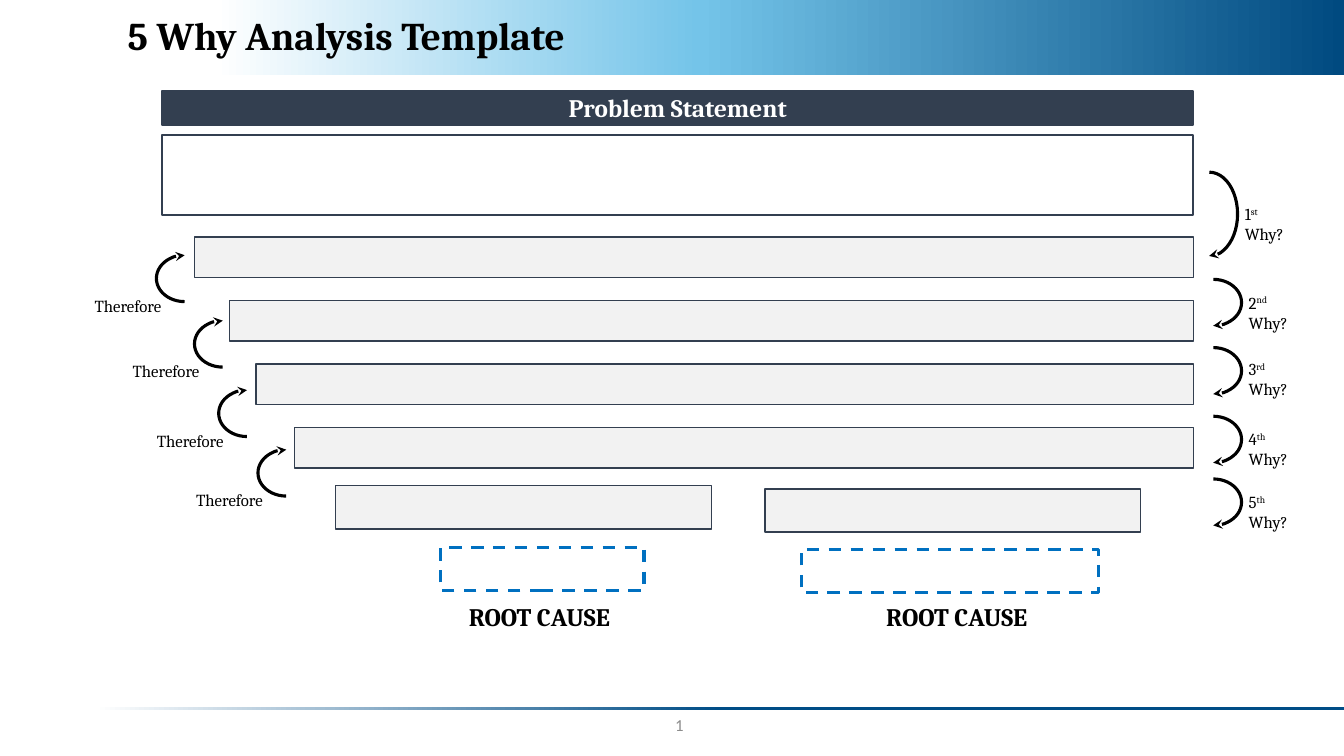
from lxml import etree
from pptx import Presentation
from pptx.dml.color import RGBColor
from pptx.enum.dml import MSO_LINE
from pptx.enum.shapes import MSO_SHAPE
from pptx.enum.text import MSO_ANCHOR, PP_ALIGN
from pptx.oxml.ns import qn
from pptx.util import Cm, Pt

RECT, ARC = MSO_SHAPE.RECTANGLE, MSO_SHAPE.ARC
DASH = MSO_LINE.DASH
TOP, MIDDLE = MSO_ANCHOR.TOP, MSO_ANCHOR.MIDDLE
LEFT, CENTER, RIGHT = PP_ALIGN.LEFT, PP_ALIGN.CENTER, PP_ALIGN.RIGHT

BLACK = RGBColor(0x00, 0x00, 0x00)
WHITE = RGBColor(0xFF, 0xFF, 0xFF)
NAVY = RGBColor(0x33, 0x3F, 0x50)
PALE = RGBColor(0xF2, 0xF2, 0xF2)
BLUE = RGBColor(0x00, 0x70, 0xC0)
GREY = RGBColor(0x8C, 0x8C, 0x8C)
SKY = RGBColor(0x74, 0xC4, 0xE9)
DEEP = RGBColor(0x00, 0x4A, 0x80)
RULE = RGBColor(0x00, 0x4D, 0x86)

SLIDE_W, SLIDE_H = 33.87, 19.05
BAR_RIGHT = 30.08
BAR_TOP, BAR_STEP = 5.97, 1.6
BAR_LEFTS = [4.9, 5.79, 6.45, 7.42]

WHYS = [
    ("1", "st", 29.77, 4.34, 2.11, 5.0),
    ("2", "nd", 29.87, 7.04, 1.17, 7.24),
    ("3", "rd", 29.87, 8.76, 1.17, 8.92),
    ("4", "th", 29.87, 10.49, 1.17, 10.67),
    ("5", "th", 29.87, 12.07, 1.17, 12.27),
]
THEREFORES = [(6.5, 11.33), (5.51, 9.83), (4.9, 8.08), (3.94, 6.43)]
FIFTH_ANSWERS = [(8.46, 12.24), (19.28, 12.32)]
ROOT_CAUSES = [(11.1, 13.79, 5.13), (20.19, 13.84, 7.49)]
ROOT_LABELS = [(10.77, 4.85), (21.92, 4.22)]


def add_run(p, text, size, color=BLACK, bold=False, font="Cambria"):
    r = p.add_run()
    r.text = text
    r.font.name = font
    r.font.size = Pt(size)
    r.font.bold = bold
    r.font.color.rgb = color
    return r


def add_rect(shapes, x, y, w, h, fill, line=NAVY, width=1.5, dash=None):
    sp = shapes.add_shape(RECT, Cm(x), Cm(y), Cm(w), Cm(h))
    sp.shadow.inherit = False
    sp.fill.solid()
    sp.fill.fore_color.rgb = fill
    sp.line.color.rgb = line
    sp.line.width = Pt(width)
    if dash:
        sp.line.dash_style = dash
    return sp


def add_gradient(shapes, x, y, w, h, stops):
    sp = shapes.add_shape(RECT, Cm(x), Cm(y), Cm(w), Cm(h))
    sp.shadow.inherit = False
    sp.line.fill.background()
    sp.fill.gradient()
    sp.fill.gradient_angle = 0
    stop_list = sp._element.spPr.find(".//" + qn("a:gsLst"))
    stop_list.clear()
    for percent, color in stops:
        gs = etree.SubElement(stop_list, qn("a:gs"), pos=str(percent * 1000))
        etree.SubElement(gs, qn("a:srgbClr"), val=str(color))


def add_text(shapes, x, y, w, h, align=LEFT, anchor=TOP):
    tf = shapes.add_textbox(Cm(x), Cm(y), Cm(w), Cm(h)).text_frame
    tf.word_wrap = True
    tf.vertical_anchor = anchor
    p = tf.paragraphs[0]
    p.alignment = align
    return p


def add_arc(shapes, x, y, h, rotation=0):
    sp = shapes.add_shape(ARC, Cm(x), Cm(y), Cm(1.42), Cm(h))
    sp.shadow.inherit = False
    sp.rotation = rotation
    sp.adjustments[0] = 162
    sp.adjustments[1] = 54.244
    sp.fill.background()
    sp.line.color.rgb = BLACK
    sp.line.width = Pt(2.25)
    etree.SubElement(sp.line._get_or_add_ln(), qn("a:tailEnd"), type="stealth")


def add_why(shapes, number, suffix, x, y, h, label_y):
    add_arc(shapes, x, y, h)
    tf = shapes.add_textbox(Cm(x + 1.35), Cm(label_y), Cm(1.91), Cm(1.27)).text_frame
    tf.word_wrap = True
    p = tf.paragraphs[0]
    add_run(p, number, 12)
    r = add_run(p, suffix, 12)
    r.font._element.set("baseline", "30000")
    add_run(tf.add_paragraph(), "Why?", 12)


def add_therefore(shapes, x, y):
    group = shapes.add_group_shape().shapes
    add_arc(group, x, y, 1.17, 180)
    add_run(add_text(group, x - 2.06, y + 0.89, 2.69, 0.76, CENTER), "Therefore", 12)


def add_frame(shapes):
    add_gradient(shapes, 0, 0, SLIDE_W, 1.88, [(16, WHITE), (52, SKY), (100, DEEP)])
    add_gradient(shapes, 2.41, 17.81, SLIDE_W - 2.41, 0.08, [(0, WHITE), (50, RULE)])
    p = add_text(shapes, 2.97, 0, 30.9, 1.88, anchor=MIDDLE)
    p.line_spacing = 0.9
    add_run(p, "5 Why Analysis Template", 28, bold=True)
    p = add_text(shapes, 9.86, 17.75, 7.62, 1.02, RIGHT, MIDDLE)
    add_run(p, "1", 12, GREY, font="Calibri")


def add_problem(shapes):
    sp = add_rect(shapes, 4.09, 2.29, 25.98, 0.86, NAVY)
    tf = sp.text_frame
    tf.vertical_anchor = MIDDLE
    p = tf.paragraphs[0]
    p.alignment = CENTER
    add_run(p, "Problem Statement", 18, WHITE, True)
    add_rect(shapes, 4.09, 3.4, 25.98, 2.03, WHITE)


def add_answers(shapes):
    for i, x in enumerate(BAR_LEFTS):
        add_rect(shapes, x, BAR_TOP + i * BAR_STEP, BAR_RIGHT - x, 1.02, PALE, width=1)
    for x, y in FIFTH_ANSWERS:
        add_rect(shapes, x, y, 9.47, 1.09, PALE, width=1)


def add_root_causes(shapes):
    for x, y, w in ROOT_CAUSES:
        add_rect(shapes, x, y, w, 1.09, WHITE, BLUE, 2.25, DASH)
    for x, w in ROOT_LABELS:
        add_run(add_text(shapes, x, 15.04, w, 1.02, RIGHT), "ROOT CAUSE", 18, bold=True)


def main():
    prs = Presentation()
    prs.slide_width, prs.slide_height = Cm(SLIDE_W), Cm(SLIDE_H)
    shapes = prs.slides.add_slide(prs.slide_layouts[6]).shapes
    add_frame(shapes)
    add_problem(shapes)
    add_answers(shapes)
    add_root_causes(shapes)
    for why in WHYS:
        add_why(shapes, *why)
    for x, y in THEREFORES:
        add_therefore(shapes, x, y)
    prs.save("out.pptx")


if __name__ == "__main__":
    main()
